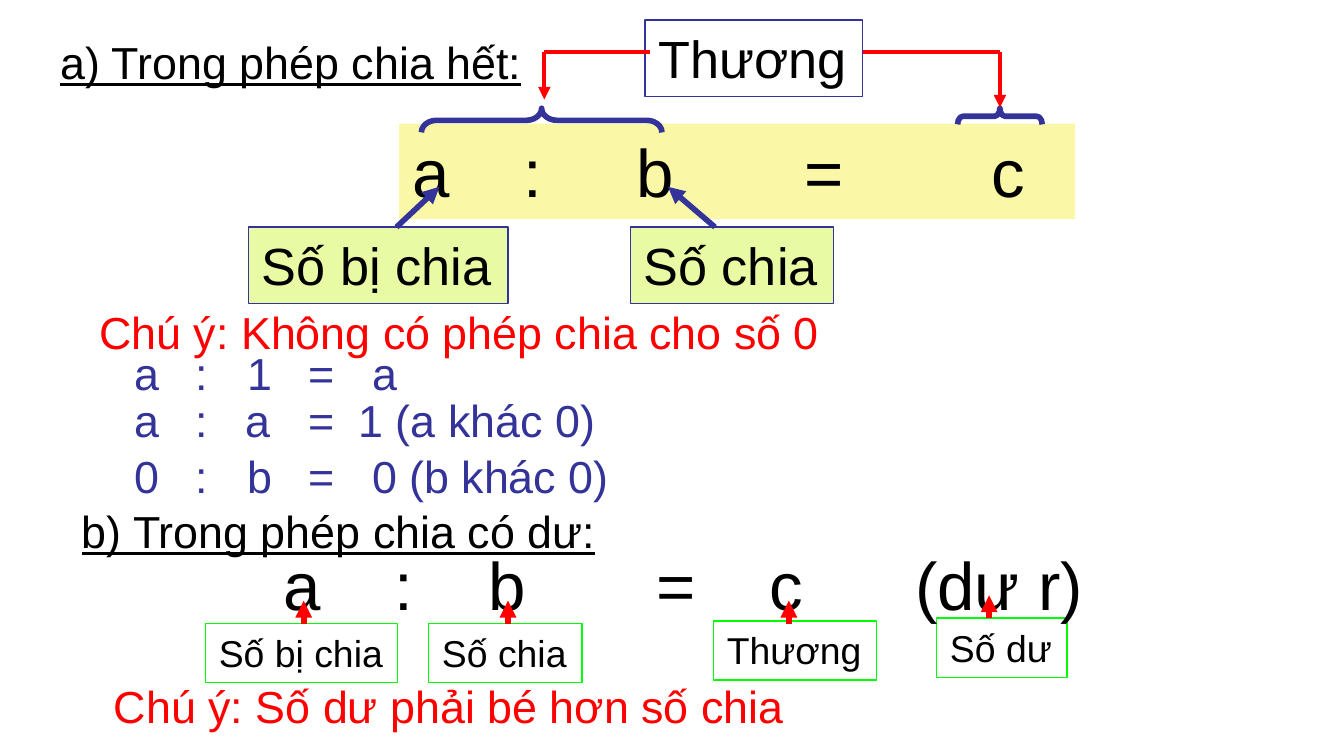
import pptx
import pptx.util
import pptx.dml.color
import pptx.enum.shapes
import pptx.enum.text
import pptx.oxml.ns
from lxml import etree

Inches, Pt = pptx.util.Inches, pptx.util.Pt
SHAPE = pptx.enum.shapes.MSO_SHAPE
COLORS = {
    name: pptx.dml.color.RGBColor.from_string(value)
    for name, value in {
        "black": "000000", "red": "FF0000", "navy": "333399",
        "green": "00FF00", "yellow": "FAF8A6", "lime": "E8FAA4",
    }.items()
}


def write(shape, text, size, color="black", underline=False, tabs=()):
    """Write one line of text, its parts set on tab stops given in inches."""
    frame = shape.text_frame
    frame.word_wrap = bool(tabs)
    frame.auto_size = pptx.enum.text.MSO_AUTO_SIZE.NONE
    frame.vertical_anchor = pptx.enum.text.MSO_ANCHOR.TOP
    frame.margin_left = frame.margin_right = Inches(0.1)
    frame.margin_top = frame.margin_bottom = Inches(0.05)
    paragraph = frame.paragraphs[0]
    paragraph.alignment = pptx.enum.text.PP_ALIGN.LEFT
    paragraph.line_spacing = 1.0
    paragraph.space_before = Pt(0)
    if tabs:
        tab_list = etree.SubElement(paragraph._p.get_or_add_pPr(), pptx.oxml.ns.qn("a:tabLst"))
        for position in tabs:
            etree.SubElement(tab_list, pptx.oxml.ns.qn("a:tab"),
                             pos=str(Inches(position)), algn="l")
    run = paragraph.add_run()
    run.text = text
    run.font.name = "Arial"
    run.font.size = Pt(size)
    run.font.bold = False
    run.font.underline = underline
    run.font.color.rgb = COLORS[color]


def connect(x1, y1, x2, y2, color, width, arrow=True):
    """Draw a line, with an arrowhead at its end if arrow is set."""
    line = slide.shapes.add_connector(
        pptx.enum.shapes.MSO_CONNECTOR.STRAIGHT,
        Inches(x1), Inches(y1), Inches(x2), Inches(y2))
    line.line.color.rgb = COLORS[color]
    line.line.width = Pt(width)
    if arrow:
        etree.SubElement(line.line._get_or_add_ln(), pptx.oxml.ns.qn("a:tailEnd"), type="triangle")
    etree.SubElement(line._element.spPr, pptx.oxml.ns.qn("a:effectLst"))


deck = pptx.Presentation()
deck.slide_width = Inches(10)
deck.slide_height = deck.slide_width * 9 // 16
slide = deck.slides.add_slide(deck.slide_layouts[5])

heading = slide.shapes.title
heading.left, heading.top = Inches(0.35), Inches(0.21)
heading.width, heading.height = Inches(3.66), Inches(0.5)
write(heading, "a) Trong phép chia hết:", 24, underline=True)

# Labelled boxes: text, left, top, width, height, size, fill, line
boxes = [
    ("a\t:\tb\t=\tc", 2.97, 0.92, 5.03, 0.71, 36, "yellow", None),
    ("Thương", 4.8, 0.15, 1.62, 0.57, 28, None, "navy"),
    ("Số bị chia", 1.85, 1.69, 1.93, 0.57, 28, "lime", "navy"),
    ("Số chia", 4.69, 1.69, 1.51, 0.57, 28, "lime", "navy"),
    ("Số bị chia", 1.53, 4.64, 1.43, 0.44, 20, None, "green"),
    ("Số chia", 3.19, 4.64, 1.14, 0.44, 20, None, "green"),
    ("Thương", 5.31, 4.62, 1.21, 0.44, 20, None, "green"),
    ("Số dư", 6.97, 4.6, 0.97, 0.44, 20, None, "green"),
]
for text, left, top, width, height, size, fill, outline in boxes:
    box = slide.shapes.add_shape(
        SHAPE.RECTANGLE, Inches(left), Inches(top), Inches(width), Inches(height))
    box.shadow.inherit = False
    if fill:
        box.fill.solid()
        box.fill.fore_color.rgb = COLORS[fill]
    else:
        box.fill.background()
    if outline:
        box.line.color.rgb = COLORS[outline]
        box.line.width = Pt(0.75)
    else:
        box.line.fill.background()
    write(box, text, size, tabs=(0.83, 1.67, 2.92, 4.31) if "\t" in text else ())

# Braces over a : b and over c
for left, top, width, height, curve in [(3.94, 0, 0.18, 1.79, 0.63),
                                        (7.38, 0.55, 0.12, 0.63, 0.33)]:
    brace = slide.shapes.add_shape(
        SHAPE.RIGHT_BRACE, Inches(left), Inches(top), Inches(width), Inches(height))
    brace.shadow.inherit = False
    brace.rotation = 270
    brace.adjustments[0] = curve
    brace.fill.background()
    brace.line.color.rgb = COLORS["navy"]
    brace.line.width = Pt(3)

# Notes, rules and the division with remainder
lines = [
    ("Chú ý: Không có phép chia cho số 0", 0.64, 2.22, 5.61, 24, "red", ()),
    ("a\t:\t1\t=\ta", 0.9, 2.52, 2.17, 24, "navy", (0.46, 0.84, 1.3, 1.77)),
    ("a\t:\ta\t=\t1 (a khác 0)", 0.9, 2.87, 3.7, 24, "navy", (0.46, 0.83, 1.3, 1.67)),
    ("0\t:\tb\t=\t0 (b khác 0)", 0.9, 3.29, 3.8, 24, "navy", (0.46, 0.84, 1.3, 1.77)),
    ("b) Trong phép chia có dư:", 0.51, 3.7, 4.06, 24, "black", ()),
    ("a\t:\tb\t=\tc\t(dư r)", 2.01, 3.99, 6.25, 36, "black", (0.83, 1.53, 2.78, 3.62, 4.7)),
    ("Chú ý: Số dư phải bé hơn số chia", 0.75, 5, 5.24, 24, "red", ()),
]
for text, left, top, width, size, color, tabs in lines:
    line_box = slide.shapes.add_textbox(
        Inches(left), Inches(top), Inches(width), Inches(0.71 if size == 36 else 0.5))
    write(line_box, text, size, color, underline=text.startswith("b)"), tabs=tabs)

# From the quotient label to the two braces
for label_x, brace_x, tip_y in [(4.84, 4.05, 0.74), (6.42, 7.44, 0.8)]:
    connect(label_x, 0.39, brace_x, 0.39, "red", 2.25, arrow=False)
    connect(brace_x, 0.39, brace_x, tip_y, "red", 2.25)

# From the dividend and divisor labels to a and b
connect(2.95, 1.69, 3.27, 1.39, "navy", 3)
connect(5.32, 1.69, 4.97, 1.39, "navy", 3)

# From the lower labels up to their terms
for x, bottom in [(2.26, 4.64), (3.78, 4.64), (5.87, 4.64), (7.36, 4.6)]:
    connect(x, bottom, x, bottom - 0.17, "red", 3)

deck.save("out.pptx")
